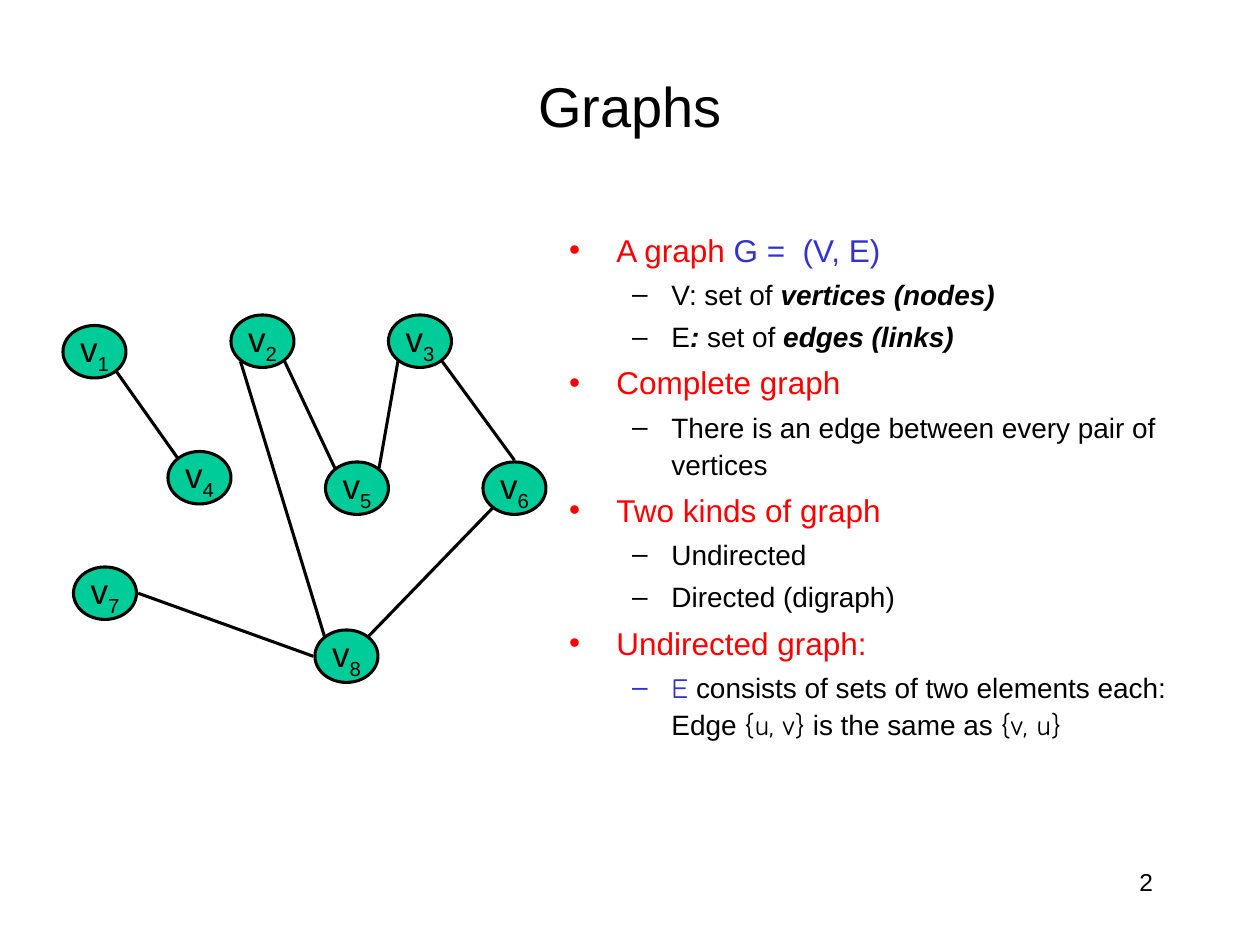
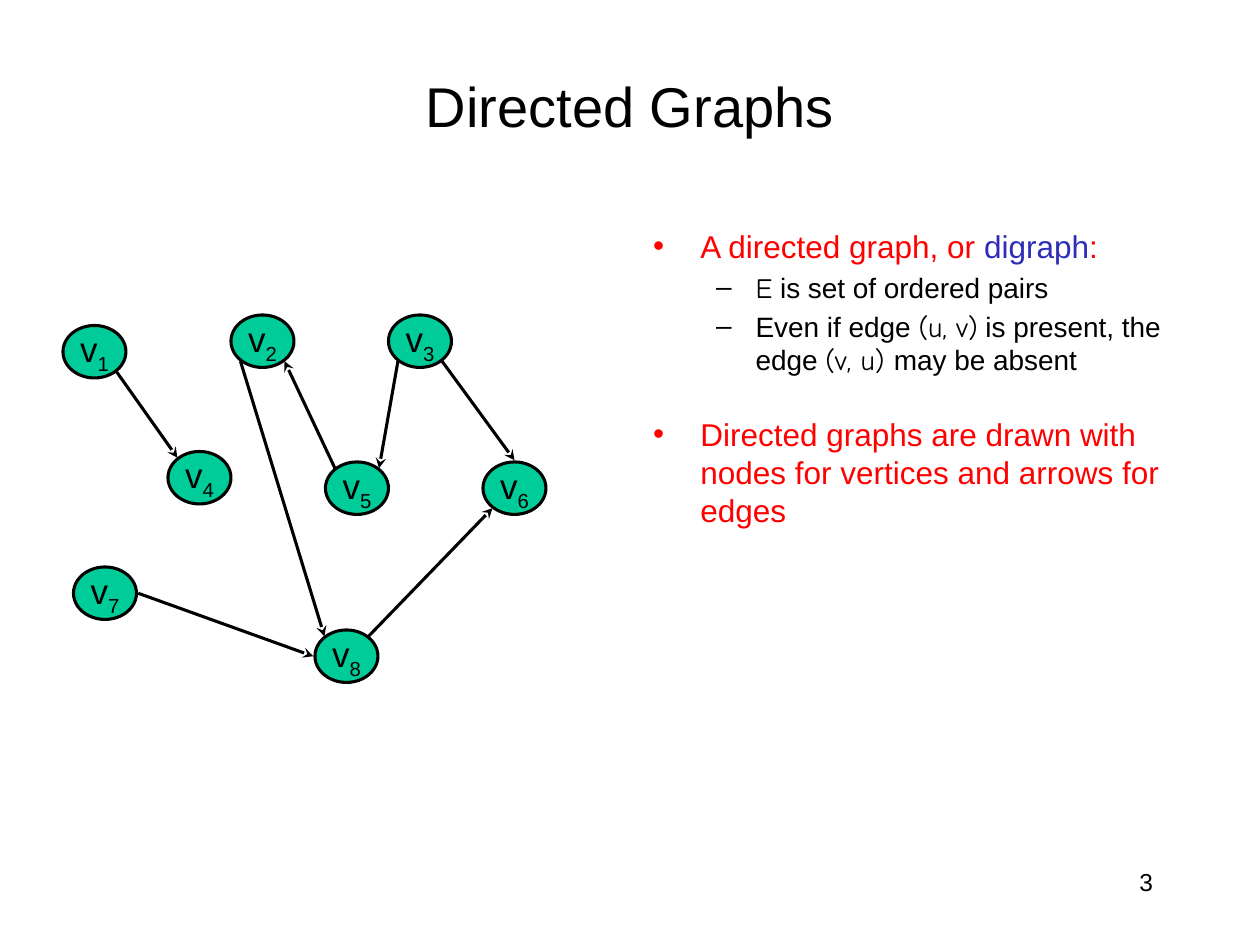
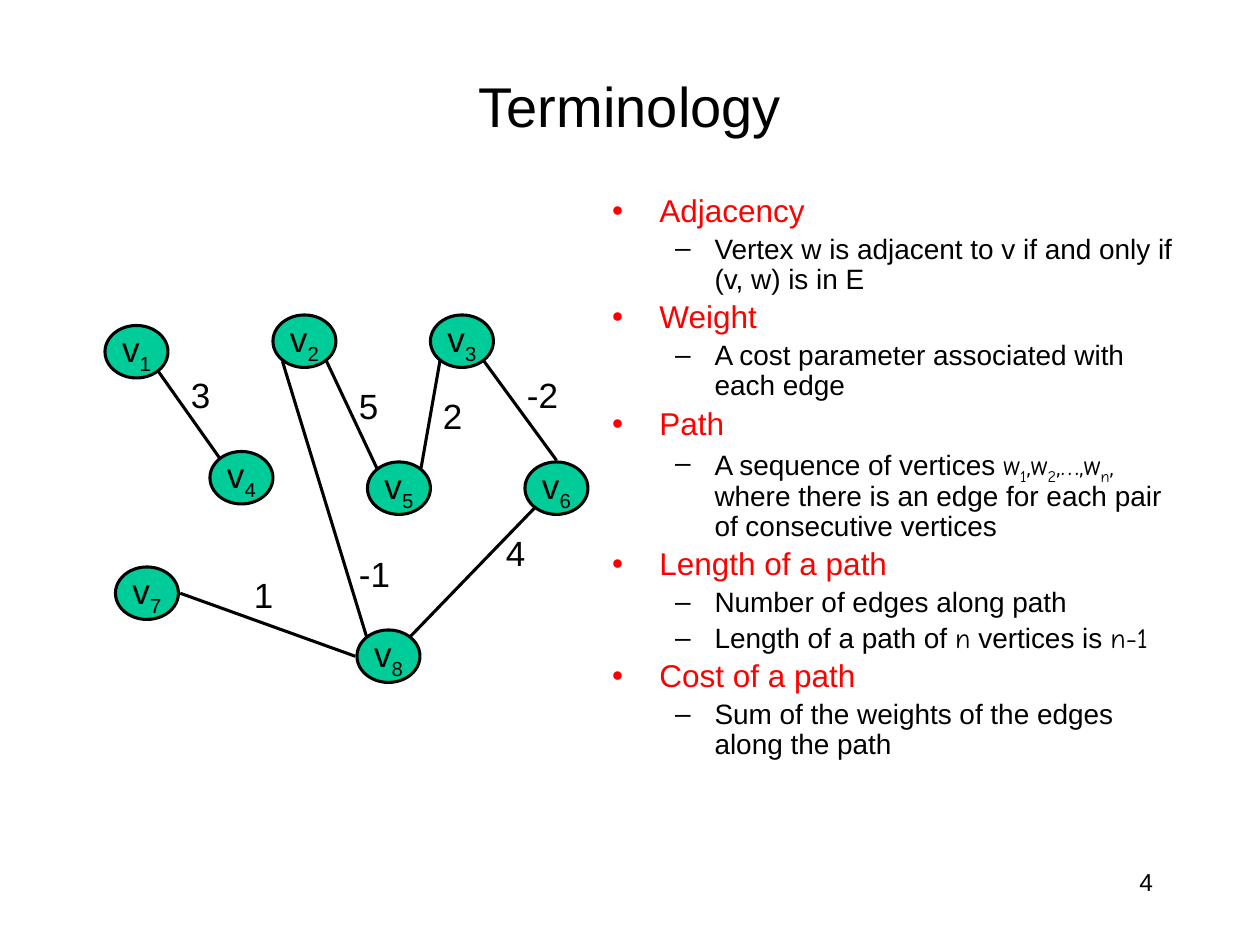
from lxml.etree import SubElement
from pptx import Presentation
from pptx.dml.color import RGBColor
from pptx.enum.shapes import MSO_CONNECTOR, MSO_SHAPE
from pptx.enum.text import MSO_ANCHOR, MSO_AUTO_SIZE, PP_ALIGN
from pptx.oxml.ns import qn
from pptx.util import Pt

COLORS = {
    "text": "000000",
    "topic": "FF0000",
    "math": "3333CC",
    "term": "2D2DB9",
    "node": "00CC99",
}
SANS, HAND = "Arial", "Comic Neue"
LEVELS = [{"size": 18, "color": "topic"}, {"size": 16, "color": "text"}]
HAND_RUN = {"font": HAND}
SUB_RUN = {"font": HAND, "sub": True}
STRONG = {"bold": True, "italic": True}

NODE_W, NODE_H = 36, 30
NODES = {
    1: (36, 186), 2: (132, 180), 3: (222, 180), 4: (96, 258),
    5: (186, 264), 6: (276, 264), 7: (42, 324), 8: (180, 360),
}
SIDES = {
    "NW": (-12.6, -11.4), "NE": (12.6, -11.4),
    "SW": (-12.6, 11.4), "SE": (12.6, 11.4),
    "N": (0, -16), "W": (-19, 0), "E": (19, 0),
}
EDGES = [
    (1, "SE", 4, "NW"), (5, "NW", 2, "SE"), (3, "SW", 5, "NE"),
    (8, "NE", 6, "SW"), (2, "SW", 8, "NW"), (3, "SE", 6, "N"),
    (7, "E", 8, "W"),
]
WEIGHTS = [
    ("3", 78, 210), ("1", 114, 324), ("-1", 174, 312), ("5", 174, 216),
    ("2", 222, 222), ("-2", 270, 210), ("4", 258, 300),
]

SLIDES = [
    {
        "title": "Graphs", "body": (318, 126, 378, 356.4), "spacing": 1.1,
        "shift": 0, "arrows": False, "weights": [],
        "items": [
            (0, ["A graph ", ("G =  (V, E)", {"color": "math"})]),
            (1, ["V: set of ", ("vertices (nodes)", STRONG)]),
            (1, ["E", (": ", STRONG), "set of ", ("edges (links)", STRONG)]),
            (0, ["Complete graph"]),
            (1, ["There is an edge between every pair of vertices"]),
            (0, ["Two kinds of graph"]),
            (1, ["Undirected"]),
            (1, ["Directed (digraph)"]),
            (0, ["Undirected graph:"]),
            (1, [("E", {"font": HAND, "color": "math"}),
                 " consists of sets of two elements each: Edge ",
                 ("{u, v}", HAND_RUN), " is the same as ", ("{v, u}", HAND_RUN)]),
        ],
    },
    {
        "title": "Directed Graphs", "body": (366, 126, 330, 356.4), "spacing": 1.0,
        "shift": 0, "arrows": True, "weights": [], "last_gap": 22,
        "items": [
            (0, ["A directed graph, or ", ("digraph", {"color": "term"}), ":"]),
            (1, [("E", HAND_RUN), " is set of ordered pairs"]),
            (1, ["Even if edge ", ("(u, v)", HAND_RUN), " is present, the edge ",
                 ("(v, u) ", HAND_RUN), "may be absent"]),
            (0, ["Directed graphs are drawn with nodes for vertices and arrows for edges"]),
        ],
    },
    {
        "title": "Terminology", "body": (342.6, 108, 341.4, 384), "spacing": 0.9,
        "shift": 24, "arrows": False, "weights": WEIGHTS,
        "items": [
            (0, ["Adjacency"]),
            (1, ["Vertex w is adjacent to v if and only if (v, w) is in E"]),
            (0, ["Weight"]),
            (1, ["A cost parameter associated with each edge"]),
            (0, ["Path"]),
            (1, ["A sequence of vertices ", ("w", HAND_RUN), ("1", SUB_RUN),
                 (",w", HAND_RUN), ("2", SUB_RUN), (",…,w", HAND_RUN),
                 ("n", SUB_RUN), (", ", HAND_RUN),
                 "where there is an edge for each pair of consecutive vertices"]),
            (0, ["Length of a path"]),
            (1, ["Number of edges along path"]),
            (1, ["Length of a path of ", ("n", HAND_RUN), " vertices is ",
                 ("n-1", HAND_RUN)]),
            (0, ["Cost of a path"]),
            (1, ["Sum of the weights of the edges along the path"]),
        ],
    },
]


def add_text(p, text, size=20, color="text", font=SANS, bold=False, italic=False, sub=False):
    r = p.add_run()
    r.text = text
    r.font.size = Pt(size)
    r.font.name = font
    r.font.bold = bold
    r.font.italic = italic
    r.font.color.rgb = RGBColor.from_string(COLORS[color])
    if sub:
        r._r.get_or_add_rPr().set("baseline", "-25000")


def place(sp, left, top, width, height):
    sp.left, sp.top, sp.width, sp.height = Pt(left), Pt(top), Pt(width), Pt(height)


prs = Presentation()
prs.slide_width, prs.slide_height = Pt(720), Pt(540)

for number, page in enumerate(SLIDES, 2):
    s = prs.slides.add_slide(prs.slide_layouts[1])

    title = s.shapes.title
    place(title, 54, 30, 612, 60)
    title.text_frame.vertical_anchor = MSO_ANCHOR.MIDDLE
    p = title.text_frame.paragraphs[0]
    p.alignment = PP_ALIGN.CENTER
    add_text(p, page["title"], size=32)

    body = s.placeholders[1]
    place(body, *page["body"])
    tf = body.text_frame
    tf.auto_size = MSO_AUTO_SIZE.NONE
    for i, (level, runs) in enumerate(page["items"]):
        p = tf.add_paragraph() if i else tf.paragraphs[0]
        p.level = level
        p.line_spacing = page["spacing"]
        for run in runs:
            text, style = (run, {}) if isinstance(run, str) else run
            add_text(p, text, **{**LEVELS[level], **style})
    if "last_gap" in page:
        p.space_before = Pt(page["last_gap"])

    graph = s.shapes.add_group_shape().shapes
    shift = page["shift"]
    for name, (x, y) in NODES.items():
        sp = graph.add_shape(MSO_SHAPE.OVAL, Pt(x + shift), Pt(y), Pt(NODE_W), Pt(NODE_H))
        sp.shadow.inherit = False
        sp.fill.solid()
        sp.fill.fore_color.rgb = RGBColor.from_string(COLORS["node"])
        sp.line.color.rgb = RGBColor.from_string(COLORS["text"])
        sp.line.width = Pt(1.75)
        tf = sp.text_frame
        tf.word_wrap = False
        tf.vertical_anchor = MSO_ANCHOR.MIDDLE
        p = tf.paragraphs[0]
        p.alignment = PP_ALIGN.CENTER
        add_text(p, "v")
        add_text(p, str(name), sub=True)

    for start, start_side, end, end_side in EDGES:
        ends = []
        for node, side in ((start, start_side), (end, end_side)):
            (x, y), (dx, dy) = NODES[node], SIDES[side]
            ends += [Pt(x + shift + NODE_W / 2 + dx), Pt(y + NODE_H / 2 + dy)]
        edge = graph.add_connector(MSO_CONNECTOR.STRAIGHT, *ends)
        edge.line.color.rgb = RGBColor.from_string(COLORS["text"])
        edge.line.width = Pt(1.75)
        sp_pr = edge._element.spPr
        if page["arrows"]:
            SubElement(sp_pr.find(qn("a:ln")), qn("a:tailEnd"), type="stealth")
        SubElement(sp_pr, qn("a:effectLst"))

    for weight, x, y in page["weights"]:
        box = graph.add_textbox(Pt(x + shift), Pt(y), Pt(19 + 7 * len(weight)), Pt(31))
        box.text_frame.word_wrap = False
        box.text_frame.auto_size = MSO_AUTO_SIZE.SHAPE_TO_FIT_TEXT
        add_text(box.text_frame.paragraphs[0], weight)

    box = s.shapes.add_textbox(Pt(516), Pt(492), Pt(150), Pt(36))
    box.text_frame.word_wrap = True
    p = box.text_frame.paragraphs[0]
    p.alignment = PP_ALIGN.RIGHT
    add_text(p, str(number), size=14)

prs.save("out.pptx")
